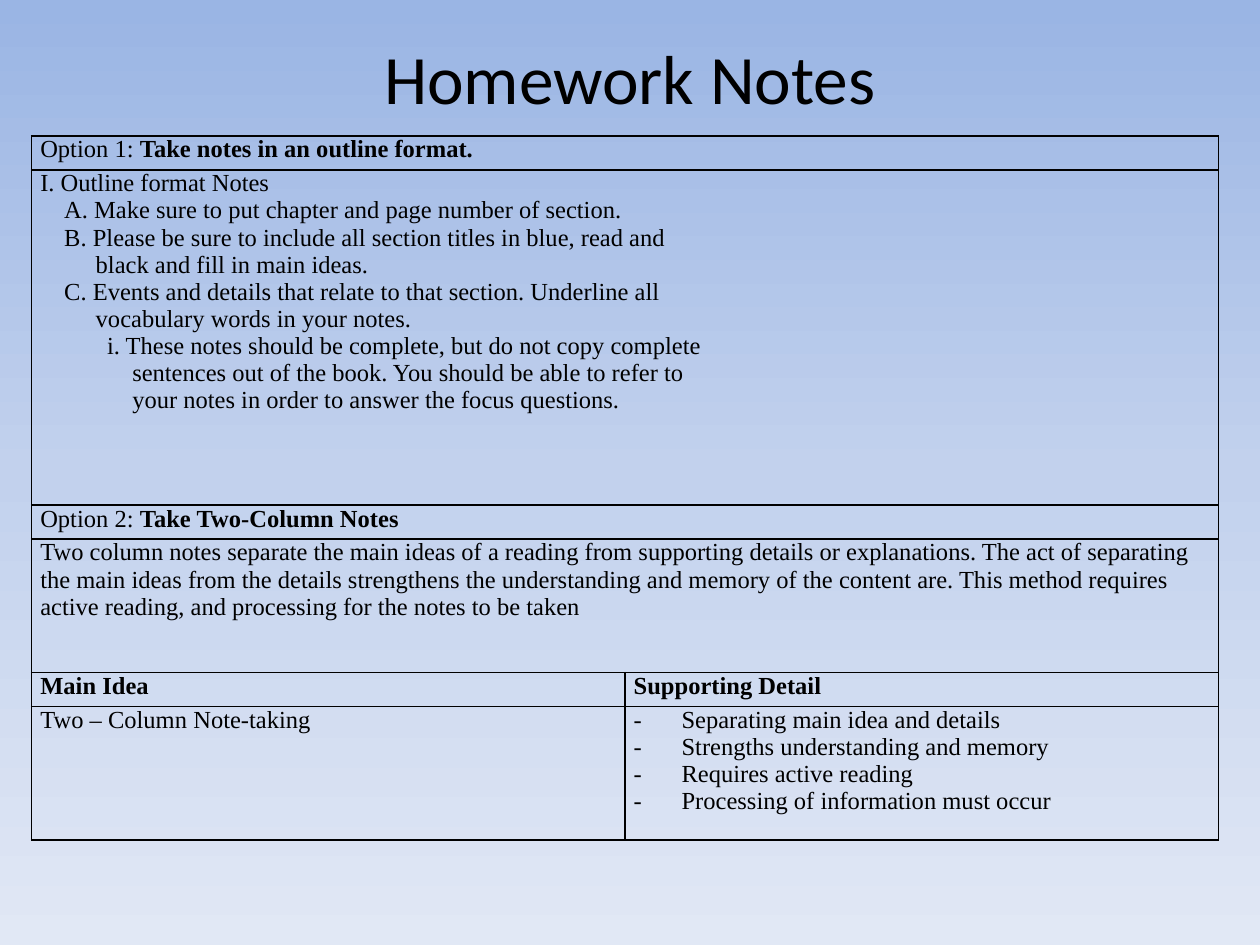
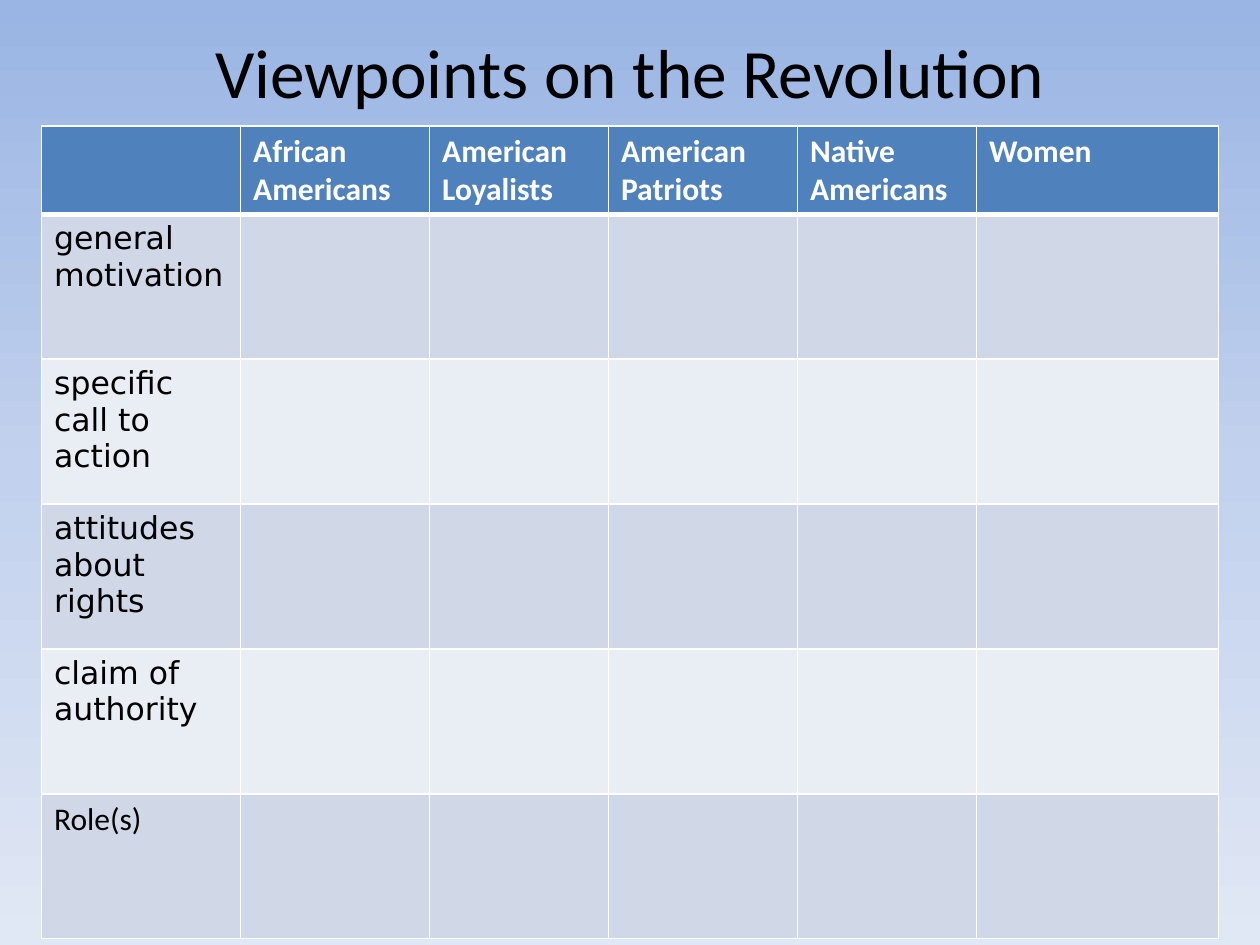
import copy

import pptx
import pptx.dml.color
import pptx.enum.text
import pptx.oxml.ns
import pptx.oxml.xmlchemy
import pptx.util
from lxml import etree

Inches = pptx.util.Inches
Pt = pptx.util.Pt
RGBColor = pptx.dml.color.RGBColor
qn = pptx.oxml.ns.qn

BLACK = RGBColor(0x00, 0x00, 0x00)
WHITE = RGBColor(0xFF, 0xFF, 0xFF)
HEADER_BLUE = RGBColor(0x4F, 0x81, 0xBD)
BAND_DARK = RGBColor(0xD0, 0xD8, 0xE8)
BAND_LIGHT = RGBColor(0xE9, 0xED, 0xF4)
BACKGROUND_STOPS = [
    (0, RGBColor(0x9A, 0xB5, 0xE4)),
    (0.5, RGBColor(0xC2, 0xD1, 0xED)),
    (1, RGBColor(0xE1, 0xE8, 0xF5)),
]
MAIN_FONT = "Calibri"
NOTES_FONT = "Times New Roman"
TOPIC_FONT = "DejaVu Sans"


def add_run(paragraph, text, name, size, color=BLACK, bold=False):
    run = paragraph.add_run()
    run.text = text
    run.font.name = name
    run.font.size = Pt(size)
    run.font.color.rgb = color
    run.font.bold = bold


def set_borders(cell, color, top=1, bottom=1):
    """Draw all four sides; top and bottom are widths in points."""
    properties = cell._tc.get_or_add_tcPr()
    sides = [("lnL", 1), ("lnR", 1), ("lnT", top), ("lnB", bottom)]
    for position, (side, width) in enumerate(sides):
        line = etree.Element(qn(f"a:{side}"), w=str(Pt(width)))
        fill = etree.SubElement(line, qn("a:solidFill"))
        etree.SubElement(fill, qn("a:srgbClr"), val=str(color))
        properties.insert(position, line)


presentation = pptx.Presentation()
presentation.slide_width = Inches(10)
presentation.slide_height = Inches(7.5)

# Shared background gradient, top to bottom
master = presentation.slide_master
background = master.background.fill
background.gradient()
background.gradient_angle = 270
stop_list = next(master.element.iter(qn("a:gsLst")))
stop_list.append(copy.deepcopy(stop_list[0]))
for stop, (position, color) in zip(background.gradient_stops, BACKGROUND_STOPS):
    stop.position = position
    stop.color.rgb = color

# Title and empty table grid of each slide
pages = [
    ("Homework Notes", 0.62, 0.25, 1.08, [4.71] * 2,
     [0.27, 2.66, 0.27, 1.06, 0.27, 1.06]),
    ("Viewpoints on the Revolution", 0.53, 0.33, 1,
     [1.58, 1.5, 1.42, 1.5, 1.42, 1.92], [0.67] + [1.15] * 5),
]
tables = []
for title, title_height, left, top, columns, rows in pages:
    slide = presentation.slides.add_slide(presentation.slide_layouts[6])
    title_box = slide.shapes.add_textbox(
        Inches(0.5), Inches(0.3), Inches(9), Inches(title_height))
    frame = title_box.text_frame
    frame.word_wrap = True
    frame.vertical_anchor = pptx.enum.text.MSO_ANCHOR.MIDDLE
    frame.paragraphs[0].alignment = pptx.enum.text.PP_ALIGN.CENTER
    add_run(frame.paragraphs[0], title, MAIN_FONT, 39.6)

    table = slide.shapes.add_table(
        len(rows), len(columns), Inches(left), Inches(top),
        Inches(sum(columns)), Inches(sum(rows))).table
    table.first_row = False
    table.horz_banding = False
    for column, width in zip(table.columns, columns):
        column.width = Inches(width)
    for row, height in zip(table.rows, rows):
        row.height = Inches(height)
    tables.append(table)
notes_table, viewpoints_table = tables

# Homework notes: each paragraph is (margin, hanging, bullet, lines),
# each line a list of (text, bold)
outline = [
    (0, 0, ["I. Outline format Notes"]),
    (0.44, 0.25, ["A. Make sure to put chapter and page number of section."]),
    (0.44, 0.25, ["B. Please be sure to include all section titles in blue, read and",
                  "black and fill in main ideas."]),
    (0.44, 0.25, ["C. Events and details that relate to that section. Underline all",
                  "vocabulary words in your notes."]),
    (0.73, 0.2, ["i. These notes should be complete, but do not copy complete",
                 "sentences out of the book. You should be able to refer to",
                 "your notes in order to answer the focus questions."]),
]
details = ["Separating main idea and details", "Strengths understanding and memory",
           "Requires active reading", "Processing of information must occur"]
explanation = (
    "Two column notes separate the main ideas of a reading from supporting details "
    "or explanations. The act of separating the main ideas from the details "
    "strengthens the understanding and memory of the content are. This method "
    "requires active reading, and processing for the notes to be taken")
notes = {
    (0, 0): [(0, 0, "", [[("Option 1: ", False),
                          ("Take notes in an outline format.", True)]])],
    (1, 0): [(margin, hanging, "", [[(line, False)] for line in lines])
             for margin, hanging, lines in outline],
    (2, 0): [(0, 0, "", [[("Option 2: ", False), ("Take Two-Column Notes", True)]])],
    (3, 0): [(0, 0, "", [[(explanation, False)]])],
    (4, 0): [(0, 0, "", [[("Main Idea", True)]])],
    (4, 1): [(0, 0, "", [[("Supporting Detail", True)]])],
    (5, 0): [(0, 0, "", [[("Two – Column Note-taking", False)]])],
    (5, 1): [(0.38, 0.38, "-", [[(detail, False)]]) for detail in details],
}
for cell in notes_table.iter_cells():
    cell.fill.background()
    cell.margin_left = cell.margin_right = Inches(0.07)
    cell.margin_top = cell.margin_bottom = 0
    set_borders(cell, BLACK)
for row in range(4):
    notes_table.cell(row, 0).merge(notes_table.cell(row, 1))

for (row, column), paragraphs in notes.items():
    frame = notes_table.cell(row, column).text_frame
    for index, (margin, hanging, bullet, lines) in enumerate(paragraphs):
        paragraph = frame.add_paragraph() if index else frame.paragraphs[0]
        properties = paragraph._p.get_or_add_pPr()
        properties.set("marL", str(Inches(margin)))
        properties.set("indent", str(-Inches(hanging)))
        if bullet:
            etree.SubElement(properties, qn("a:buFont"), typeface=NOTES_FONT)
            etree.SubElement(properties, qn("a:buChar"), char=bullet)
        for line_index, line in enumerate(lines):
            if line_index:
                paragraph.add_line_break()
            for text, bold in line:
                add_run(paragraph, text, NOTES_FONT, 14, bold=bold)

# Viewpoints: groups across the top, topics down the side
groups = ["African Americans", "American Loyalists", "American Patriots",
          "Native Americans", "Women"]
topics = [("general motivation", TOPIC_FONT), ("specific call to action", TOPIC_FONT),
          ("attitudes about rights", TOPIC_FONT), ("claim of authority", TOPIC_FONT),
          ("Role(s)", MAIN_FONT)]
row_fills = [HEADER_BLUE] + [BAND_DARK, BAND_LIGHT] * 2 + [BAND_DARK]
for row, color in enumerate(row_fills):
    for cell in viewpoints_table.rows[row].cells:
        cell.fill.solid()
        cell.fill.fore_color.rgb = color
        set_borders(cell, WHITE, top=3 if row == 1 else 1, bottom=3 if row == 0 else 1)
for column, group in enumerate(groups, start=1):
    paragraph = viewpoints_table.cell(0, column).text_frame.paragraphs[0]
    add_run(paragraph, group, MAIN_FONT, 18, WHITE, bold=True)
for row, (topic, name) in enumerate(topics, start=1):
    paragraph = viewpoints_table.cell(row, 0).text_frame.paragraphs[0]
    add_run(paragraph, topic, name, 18)

presentation.save("out.pptx")
